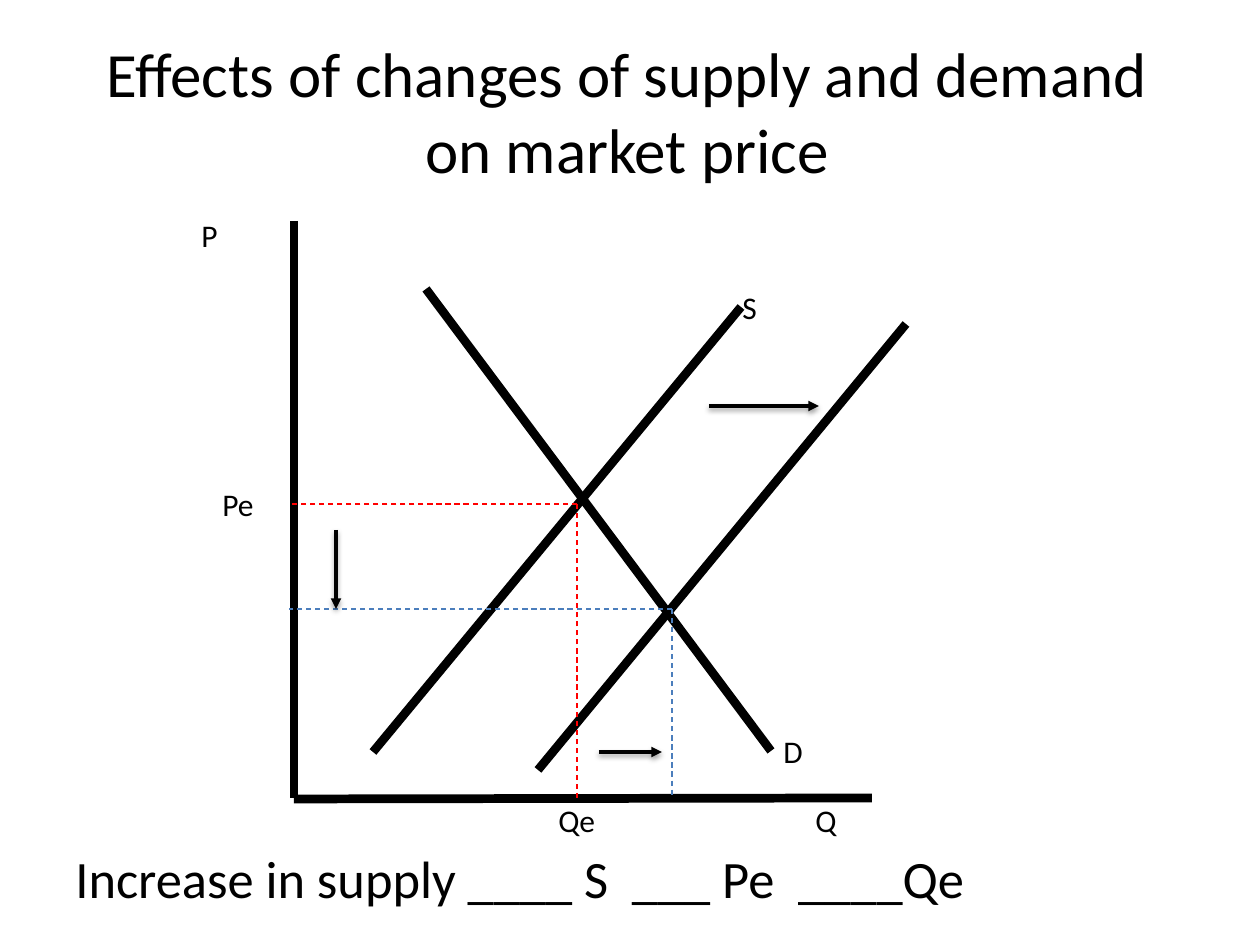
from lxml.etree import SubElement
from pptx import Presentation
from pptx.dml.color import RGBColor
from pptx.enum.dml import MSO_LINE
from pptx.enum.shapes import MSO_CONNECTOR
from pptx.enum.text import MSO_ANCHOR, PP_ALIGN
from pptx.oxml.ns import qn
from pptx.util import Pt

PX = 914400 // 126
BLACK = RGBColor(0x00, 0x00, 0x00)
RED = RGBColor(0xFF, 0x00, 0x00)
BLUE = RGBColor(0x4B, 0x7E, 0xBC)

TITLE = "Effects of changes of supply and demand on market price"
CAPTION = "Increase in supply ____ S  ___ Pe  ____Qe"

# Left and top of each label
LABELS = [
    ("P", 189, 210),
    ("Q", 803, 795),
    ("D", 771, 726),
    ("S", 730, 282),
    ("Pe", 210, 479),
    ("Qe", 546, 795),
]

# Lines run from x1, y1 to x2, y2
AXES = [(294, 221, 294, 798), (872, 798, 294, 799)]
CURVES = [
    (741, 307, 373, 752),  # supply
    (426, 289, 771, 751),  # demand
    (906, 324, 538, 770),  # new supply
]
GUIDES = [
    (577, 504, 289, 504, RED),
    (577, 798, 577, 501, RED),
    (672, 609, 289, 609, BLUE),
    (672, 609, 672, 795, BLUE),
]
SHIFTS = [(709, 406, 819, 406), (336, 530, 336, 609), (599, 752, 662, 752)]


def px(*vals):
    return [v * PX for v in vals]


def put(frame, text, size):
    para = frame.paragraphs[0]
    run = para.add_run()
    run.text = text
    run.font.name = "Calibri"
    run.font.size = Pt(size)
    run.font.color.rgb = BLACK
    return para


def add_text(slide, text, box, size):
    frame = slide.shapes.add_textbox(*px(*box)).text_frame
    frame.word_wrap = True
    put(frame, text, size)


def add_line(slide, ends, color, width):
    """Draw a straight line and return it with its empty effect list."""
    line = slide.shapes.add_connector(MSO_CONNECTOR.STRAIGHT, *px(*ends))
    line.line.color.rgb = color
    line.line.width = Pt(width)
    effects = SubElement(line._element.spPr, qn("a:effectLst"))
    return line, effects


def add_arrow(slide, ends):
    line, effects = add_line(slide, ends, BLACK, 2)
    SubElement(line.line._get_or_add_ln(), qn("a:tailEnd"), type="triangle")
    shade = SubElement(
        effects, qn("a:outerShdw"), blurRad=str(Pt(3.1)),
        dist=str(Pt(1.6)), dir="5400000", rotWithShape="0",
    )
    tone = SubElement(shade, qn("a:srgbClr"), val=str(BLACK))
    SubElement(tone, qn("a:alpha"), val="38000")


def main():
    deck = Presentation()
    deck.slide_width, deck.slide_height = px(1260, 945)
    slide = deck.slides.add_slide(deck.slide_layouts[5])

    title = slide.shapes.title
    title.left, title.top, title.width, title.height = px(60, 32, 1134, 157)
    title.text_frame.vertical_anchor = MSO_ANCHOR.MIDDLE
    put(title.text_frame, TITLE, 36).alignment = PP_ALIGN.CENTER

    for ends in AXES + CURVES:
        add_line(slide, ends, BLACK, 5)
    add_text(slide, CAPTION, (63, 840, 1197, 76), 30)
    for text, left, top in LABELS:
        add_text(slide, text, (left, top, 126, 50), 18)
    for *ends, color in GUIDES:
        guide, _ = add_line(slide, ends, color, 0.75)
        guide.line.dash_style = MSO_LINE.DASH
    for ends in SHIFTS:
        add_arrow(slide, ends)

    deck.save("out.pptx")


if __name__ == "__main__":
    main()
